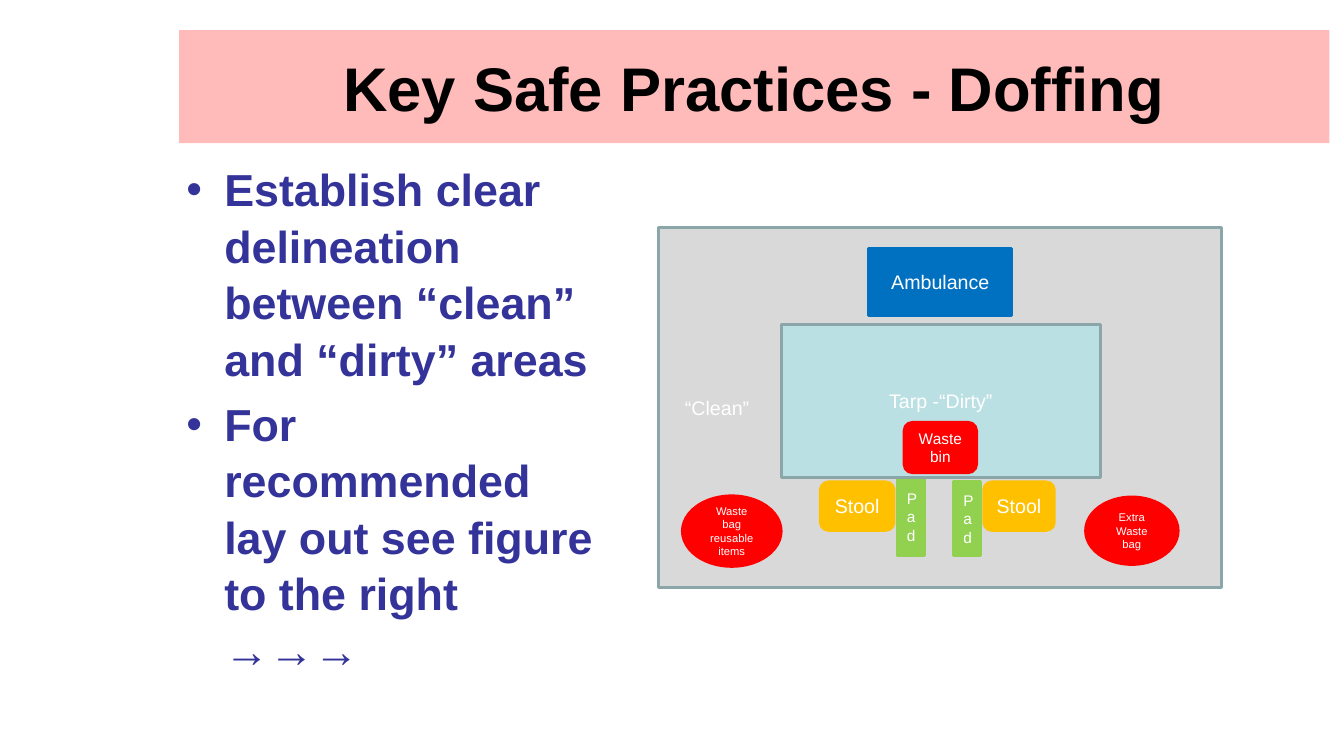
from dataclasses import dataclass

from lxml.etree import SubElement
from pptx import Presentation
from pptx.dml.color import RGBColor
from pptx.enum.shapes import MSO_SHAPE as Shape
from pptx.enum.text import MSO_ANCHOR as Anchor, MSO_AUTO_SIZE as AutoSize, PP_ALIGN as Align
from pptx.oxml.ns import qn
from pptx.util import Pt


@dataclass(frozen=True)
class Theme:
    font: str = "Arial"
    black: str = "000000"
    white: str = "FFFFFF"
    navy: str = "333399"
    banner: str = "FF0101"
    ground: str = "D9D9D9"
    tarp: str = "BBE0E3"
    edge: str = "8AA6A8"
    blue: str = "0070C0"
    amber: str = "FFC000"
    green: str = "92D050"
    red: str = "FF0000"
    title: float = 44
    body: float = 32
    label: float = 14
    small: float = 11
    tiny: float = 8


theme = Theme()


def style_text(paragraph, size, color, bold=False):
    for run in paragraph.runs:
        run.font.name = theme.font
        run.font.size = Pt(size)
        run.font.bold = bold
        run.font.color.rgb = RGBColor.from_string(color)


def place(shape, left, top, width, height):
    shape.left, shape.top = Pt(left), Pt(top)
    shape.width, shape.height = Pt(width), Pt(height)


presentation = Presentation()
presentation.slide_width, presentation.slide_height = Pt(960), Pt(540)
slide = presentation.slides.add_slide(presentation.slide_layouts[1])

# Title on a translucent banner
title = slide.shapes.title
place(title, 128, 21.6, 821.5, 80.6)
title.fill.solid()
title.fill.fore_color.rgb = RGBColor.from_string(theme.banner)
banner_color = title.fill._xPr.find(qn("a:solidFill"))[0]
SubElement(banner_color, qn("a:alpha"), val="27000")
title.text_frame.text = "Key Safe Practices - Doffing"
title.text_frame.vertical_anchor = Anchor.MIDDLE
title.text_frame.paragraphs[0].alignment = Align.CENTER
style_text(title.text_frame.paragraphs[0], theme.title, theme.black, True)

# Bulleted practices
body = slide.placeholders[1]
place(body, 126, 110.2, 311.8, 371.5)
body.text_frame.auto_size = AutoSize.NONE
body.text_frame.text = (
    "Establish clear delineation between “clean” and “dirty” areas\n"
    "For recommended lay out see figure to the right →→→"
)
for index, paragraph in enumerate(body.text_frame.paragraphs):
    properties = paragraph._p.get_or_add_pPr()
    properties.set("marL", str(Pt(27)))
    properties.set("indent", str(-Pt(27)))
    SubElement(properties, qn("a:buFont"), typeface=theme.font)
    SubElement(properties, qn("a:buChar"), char="•")
    paragraph.line_spacing = 1.05
    paragraph.space_before = Pt(6.4 if index else 0)
    style_text(paragraph, theme.body, theme.navy, True)

# Doffing layout, back to front: kind, text, box, fill, line, size
layout_parts = [
    (Shape.RECTANGLE, "“Clean”", (470.2, 162.7, 402.5, 257), theme.ground, theme.edge, theme.label),
    (Shape.RECTANGLE, "Ambulance", (620.6, 177.8, 102.2, 47.5), theme.blue, theme.blue, theme.label),
    (Shape.ROUNDED_RECTANGLE, "Stool", (586, 344.2, 52.6, 34.6), theme.amber, theme.amber, theme.label),
    (Shape.ROUNDED_RECTANGLE, "Stool", (702.7, 344.2, 50.4, 34.6), theme.amber, theme.amber, theme.label),
    (Shape.RECTANGLE, "P\na\nd", (640.8, 341.3, 19.4, 55.4), theme.green, theme.green, theme.small),
    (Shape.RECTANGLE, "P\na\nd", (681.1, 344.2, 19.4, 52.6), theme.green, theme.green, theme.small),
    (Shape.RECTANGLE, "Tarp -“Dirty”", (558, 231.8, 228.2, 109.4), theme.tarp, theme.edge, theme.label),
    (Shape.ROUNDED_RECTANGLE, "Waste bin", (645.8, 301.7, 51.8, 36), theme.red, theme.red, theme.small),
    (Shape.OVAL, "Waste bag reusable items", (487.4, 354.2, 70.6, 50.4), theme.red, theme.red, theme.tiny),
    (Shape.OVAL, "Extra Waste bag", (775.4, 355, 66.2, 48.2), theme.red, theme.red, theme.tiny),
]
for kind, text, box, fill, line, size in layout_parts:
    shape = slide.shapes.add_shape(kind, *map(Pt, box))
    shape.shadow.inherit = False
    shape.fill.solid()
    shape.fill.fore_color.rgb = RGBColor.from_string(fill)
    shape.line.color.rgb = RGBColor.from_string(line)
    shape.line.width = Pt(2)
    frame = shape.text_frame
    frame.word_wrap = True
    frame.vertical_anchor = Anchor.MIDDLE
    frame.text = text
    is_ground = fill == theme.ground
    if is_ground:
        frame.margin_left = Pt(19)
    for paragraph in frame.paragraphs:
        paragraph.alignment = Align.LEFT if is_ground else Align.CENTER
        style_text(paragraph, size, theme.white)

presentation.save("out.pptx")
